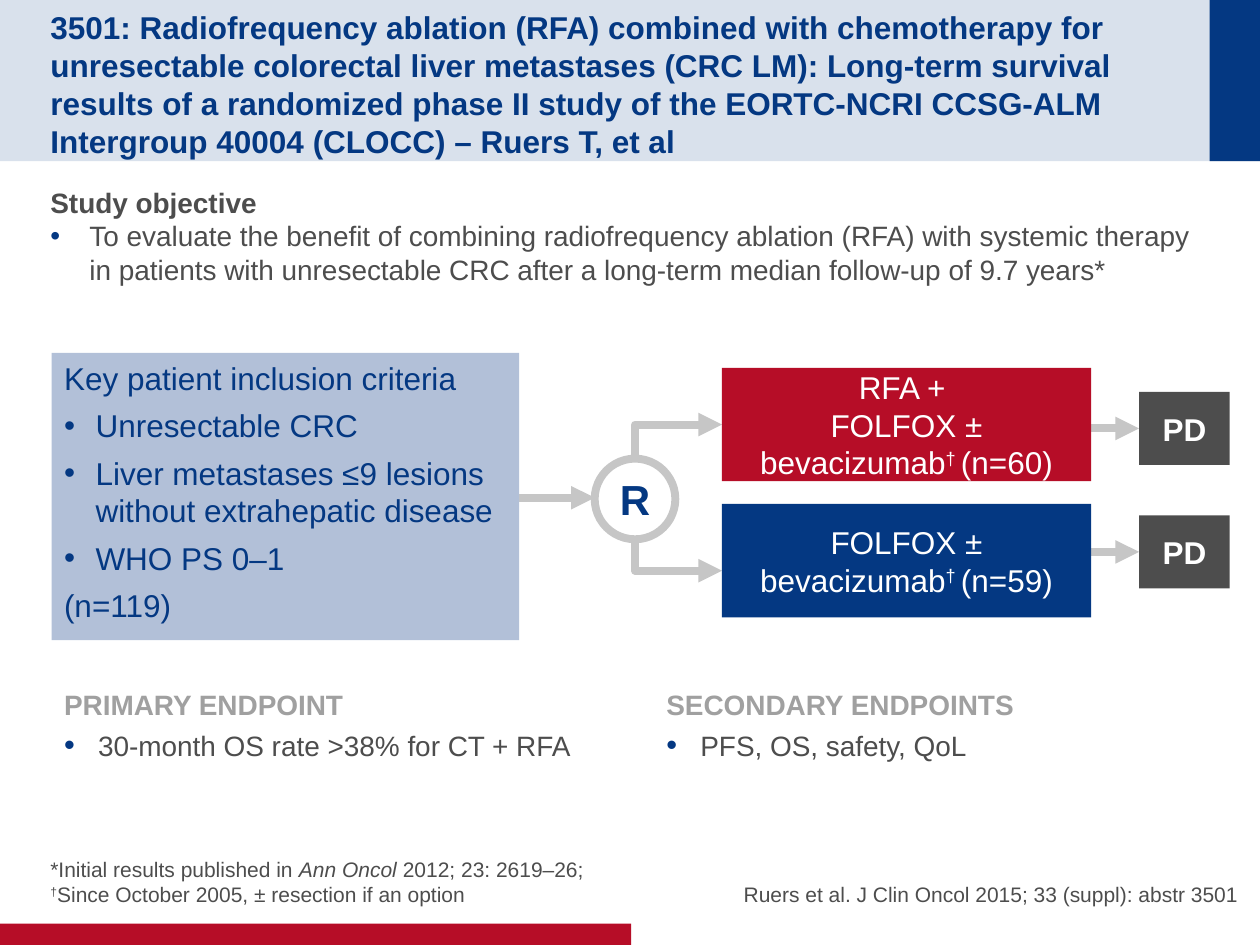
import pptx
import pptx.util
import pptx.dml.color
import pptx.enum.shapes
import pptx.enum.text
import pptx.oxml
import pptx.oxml.ns
import lxml.etree

Inches = pptx.util.Inches
Pt = pptx.util.Pt
RGBColor = pptx.dml.color.RGBColor
SHAPE = pptx.enum.shapes.MSO_SHAPE
CONNECTOR = pptx.enum.shapes.MSO_CONNECTOR
ALIGN = pptx.enum.text.PP_ALIGN
ANCHOR = pptx.enum.text.MSO_ANCHOR
qn = pptx.oxml.ns.qn

NAVY = RGBColor(0x04, 0x38, 0x82)
RED = RGBColor(0xB6, 0x0D, 0x27)
PALE_BLUE = RGBColor(0xB2, 0xC0, 0xD8)
DARK_GREY = RGBColor(0x4D, 0x4D, 0x4D)
MID_GREY = RGBColor(0xA0, 0xA0, 0xA0)
LIGHT_GREY = RGBColor(0xC6, 0xC6, 0xC6)
WHITE = RGBColor(0xFF, 0xFF, 0xFF)


def add_xml(parent, tag, **attributes):
    """Append a DrawingML child element."""
    return lxml.etree.SubElement(parent, qn(tag), attributes)


class SlideWriter:
    font = "Arial"
    line_width = Pt(4.5)

    def __init__(self, slide):
        self.slide = slide

    def frame(self, shape, insets, anchor, wrap=True):
        frame = shape.text_frame
        frame.word_wrap = wrap
        frame.vertical_anchor = anchor
        (frame.margin_left, frame.margin_top,
         frame.margin_right, frame.margin_bottom) = map(Inches, insets)
        return frame

    def shape(self, kind, place, fill=None, opacity=None, line=None,
              insets=(0.1, 0, 0.1, 0), anchor=ANCHOR.MIDDLE, wrap=True):
        shape = self.slide.shapes.add_shape(kind, *map(Inches, place))
        shape.shadow.inherit = False
        if fill is None:
            shape.fill.background()
        else:
            shape.fill.solid()
            shape.fill.fore_color.rgb = fill
        if opacity is not None:
            color = shape.fill._xPr.find(".//" + qn("a:srgbClr"))
            add_xml(color, "a:alpha", val=str(opacity * 1000))
        if line is None:
            shape.line.fill.background()
        else:
            shape.line.color.rgb = line
            shape.line.width = self.line_width
        self.frame(shape, insets, anchor, wrap)
        return shape

    def text_box(self, place, insets=(0.1, 0.05, 0.1, 0.05), anchor=ANCHOR.TOP):
        box = self.slide.shapes.add_textbox(*map(Inches, place))
        self.frame(box, insets, anchor)
        return box

    def para(self, box, runs, size, color, bold=False, align=ALIGN.LEFT,
             after=0, indent=0, bullet_size=100):
        """Runs are (text, style) pairs; the style is "", "sup" or "italic"."""
        frame = box.text_frame
        para = frame.paragraphs[0]
        if para.runs:
            para = frame.add_paragraph()
        para.alignment = align
        para.space_after = Pt(after)
        if indent:
            properties = para._p.get_or_add_pPr()
            properties.set("marL", str(Inches(indent)))
            properties.set("indent", str(-Inches(indent)))
            bullet_color = add_xml(properties, "a:buClr")
            add_xml(bullet_color, "a:srgbClr", val=str(NAVY))
            add_xml(properties, "a:buSzPct", val=str(bullet_size * 1000))
            add_xml(properties, "a:buFont", typeface=self.font)
            add_xml(properties, "a:buChar", char="•")
        for text, style in runs:
            for number, part in enumerate(text.split("\n")):
                if number:
                    para.add_line_break()
                if not part:
                    continue
                span = para.add_run()
                span.text = part
                span.font.name = self.font
                span.font.size = Pt(size)
                span.font.color.rgb = color
                span.font.bold = bold
                if style == "italic":
                    span.font.italic = True
                elif style == "sup":
                    span._r.get_or_add_rPr().set("baseline", "30000")

    def connector(self, start, end, kind=CONNECTOR.STRAIGHT, arrow="a:tailEnd"):
        line = self.slide.shapes.add_connector(kind, *map(Inches, start + end))
        line.line.color.rgb = LIGHT_GREY
        line.line.width = self.line_width
        add_xml(line.line._get_or_add_ln(), arrow, type="triangle")
        add_xml(line._element.spPr, "a:effectLst")
        return line

    def corner_arrow(self, start, end):
        """Leave start vertically and reach end horizontally.

        The preset runs horizontally first, so it is drawn from the tip back.
        """
        line = self.connector(end, start, CONNECTOR.ELBOW, "a:headEnd")
        line._element.spPr.find(qn("a:prstGeom")).set("prst", "bentConnector2")


def main():
    deck = pptx.Presentation()
    deck.slide_width, deck.slide_height = Inches(10), Inches(7.5)
    page = SlideWriter(deck.slides.add_slide(deck.slide_layouts[6]))

    # Header band and footer bar
    page.shape(SHAPE.RECTANGLE, (0, 0, 10, 1.28), NAVY, opacity=15)
    page.shape(SHAPE.RECTANGLE, (9.6, 0, 0.4, 1.28), NAVY)
    page.shape(SHAPE.RECTANGLE, (0, 7.33, 5.01, 0.17), RED)

    # Study objective
    objective = page.text_box((0.4, 1.42, 9.19, 1), (0, 0.05, 0.1, 0.05))
    page.para(objective, [("Study objective", "")], 16, DARK_GREY, bold=True)
    page.para(objective, [(
        "To evaluate the benefit of combining radiofrequency ablation (RFA) with "
        "systemic therapy in patients with unresectable CRC after a long-term "
        "median follow-up of 9.7 years*", "")], 16, DARK_GREY, after=12, indent=0.31)

    # Title
    title = page.text_box((0.4, 0.2, 9.01, 0.88), (0, 0.05, 0, 0), ANCHOR.MIDDLE)
    page.para(title, [(
        "3501: Radiofrequency ablation (RFA) combined with chemotherapy for "
        "unresectable colorectal liver metastases (CRC LM): Long-term survival "
        "results of a randomized phase II study of the EORTC-NCRI CCSG-ALM "
        "Intergroup 40004 (CLOCC) – Ruers T, et al", "")], 18, NAVY, bold=True)

    # Footnotes and reference
    notes = page.text_box((0.4, 6.67, 5.1, 0.53), (0, 0, 0, 0), ANCHOR.BOTTOM)
    page.para(notes, [("*Initial results published in ", ""),
                      ("Ann Oncol ", "italic"),
                      ("2012; 23: 2619–26;\n", ""),
                      ("†", "sup"),
                      ("Since October 2005, ± resection if an option", "")],
              12, DARK_GREY, after=4)
    reference = page.text_box((5.08, 6.67, 4.75, 0.53), (0, 0, 0, 0), ANCHOR.BOTTOM)
    page.para(reference,
              [("Ruers et al. J Clin Oncol 2015; 33 (suppl): abstr 3501", "")],
              12, DARK_GREY, align=ALIGN.RIGHT, after=4)

    # Randomisation node and its arrows
    node = page.shape(SHAPE.OVAL, (4.72, 3.64, 0.64, 0.64), line=LIGHT_GREY, wrap=False)
    page.para(node, [("R", "")], 24, NAVY, bold=True, align=ALIGN.CENTER)
    page.corner_arrow((5.04, 3.64), (5.73, 3.37))
    page.corner_arrow((5.04, 4.27), (5.73, 4.53))
    page.connector((3.51, 3.95), (4.72, 3.95))

    # Endpoints
    for left, heading, endpoint in (
            (0.41, "PRIMARY ENDPOINT", "30-month OS rate >38% for CT + RFA"),
            (5.19, "SECONDARY ENDPOINTS", "PFS, OS, safety, QoL")):
        box = page.text_box((left, 5.41, 4.52, 1.1))
        page.para(box, [(heading, "")], 16, MID_GREY, bold=True, after=4)
        page.para(box, [(endpoint, "")], 16, DARK_GREY, after=4,
                  indent=0.27, bullet_size=110)

    # Inclusion criteria
    criteria = page.shape(SHAPE.ROUNDED_RECTANGLE, (0.41, 2.8, 3.71, 2.28), PALE_BLUE,
                          insets=(0.1, 0.05, 0.1, 0.05), anchor=ANCHOR.TOP)
    criteria.adjustments[0] = 0
    for text, indent in (
            ("Key patient inclusion criteria", 0),
            ("Unresectable CRC", 0.25),
            ("Liver metastases ≤9 lesions without extrahepatic disease", 0.25),
            ("WHO PS 0–1", 0.25),
            ("(n=119)", 0)):
        page.para(criteria, [(text, "")], 18, NAVY, after=5.4, indent=indent)

    # Progression boxes
    for top in (3.11, 4.09):
        box = page.shape(SHAPE.RECTANGLE, (9.04, top, 0.72, 0.58), DARK_GREY)
        page.para(box, [("PD", "")], 18, WHITE, bold=True, align=ALIGN.CENTER)
        page.connector((8.42, top + 0.29), (9.04, top + 0.29))

    # Treatment arms
    for top, fill, therapy, count in (
            (2.92, RED, "RFA + \nFOLFOX ± bevacizumab", "(n=60)"),
            (4, NAVY, "FOLFOX ± bevacizumab", "(n=59)")):
        arm = page.shape(SHAPE.RECTANGLE, (5.73, top, 2.93, 0.9), fill)
        page.para(arm, [(therapy, ""), ("† ", "sup"), (count, "")], 18, WHITE,
                  align=ALIGN.CENTER)

    deck.save("out.pptx")


if __name__ == "__main__":
    main()
